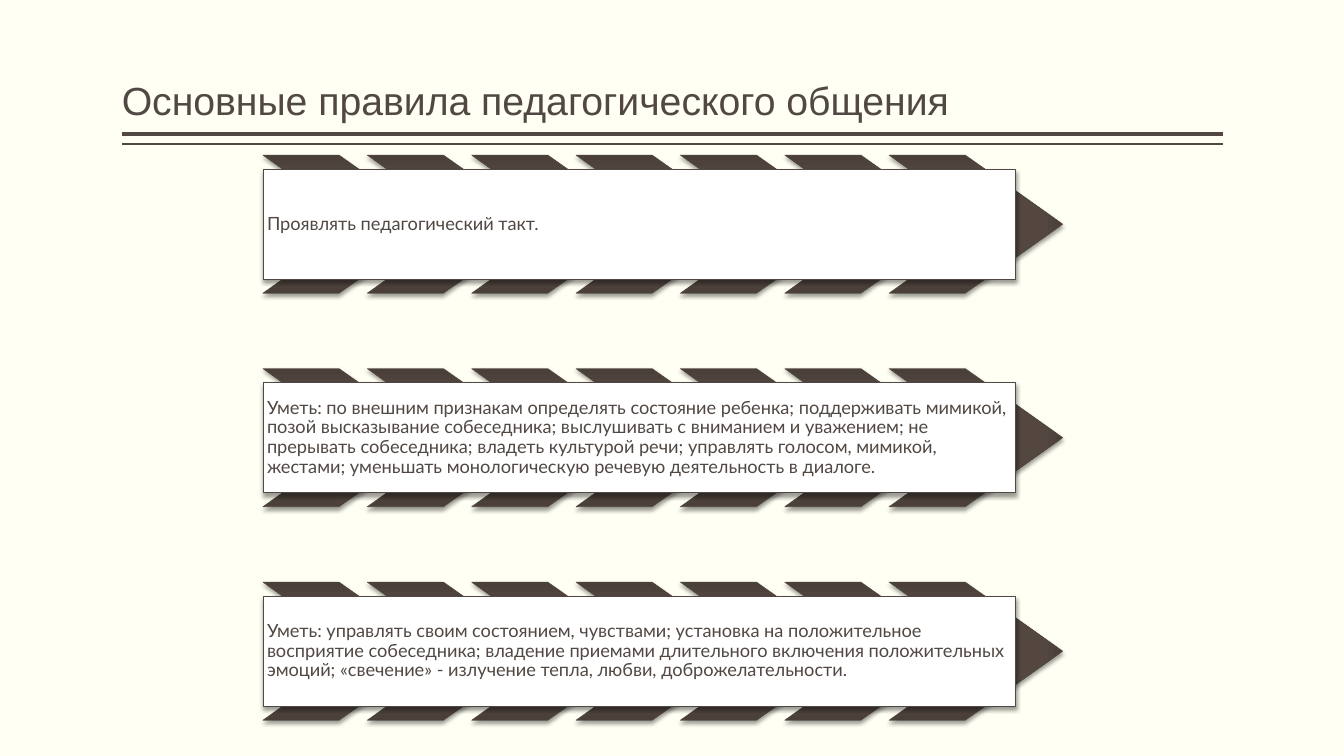
from lxml import etree
from pptx import Presentation
from pptx import util as u
from pptx.dml.color import RGBColor
from pptx.enum import shapes, text
from pptx.oxml import ns

CREAM = RGBColor(0xFF, 0xFF, 0xF3)
BROWN = RGBColor(0x51, 0x48, 0x43)
WHITE = RGBColor(0xFF, 0xFF, 0xFF)
SHADOW = RGBColor(0x00, 0x00, 0x00)
# Chevron gradient: position in percent and colour
GRADIENT = [
    (0, RGBColor(0x54, 0x47, 0x40)),
    (71, RGBColor(0x53, 0x47, 0x40)),
    (100, RGBColor(0x4A, 0x3F, 0x39)),
]

TITLE = "Основные правила педагогического общения"
RULES = [
    "Проявлять педагогический такт.",
    "Уметь: по внешним признакам определять состояние ребенка; поддерживать "
    "мимикой, позой высказывание собеседника; выслушивать с вниманием и "
    "уважением; не прерывать собеседника; владеть культурой речи; управлять "
    "голосом, мимикой, жестами; уменьшать монологическую речевую "
    "деятельность в диалоге.",
    "Уметь: управлять своим состоянием, чувствами; установка на положительное "
    "восприятие собеседника; владение приемами длительного включения "
    "положительных эмоций; «свечение» - излучение тепла, любви, "
    "доброжелательности.",
]

# Layout in centimetres
TITLE_LEFT, TITLE_WIDTH = 3.07, 27.74
ROW_LEFT, ROW_TOP, ROW_PITCH = 6.63, 3.91, 5.38
CHEVRON_COUNT, CHEVRON_PITCH = 7, 2.63
CHEVRON_WIDTH, CHEVRON_HEIGHT = 4.37, 3.48
BOX_WIDTH, BOX_HEIGHT = 18.97, 2.77


def add_xml(parent, tag, **attributes):
    return etree.SubElement(parent, ns.qn(tag), attributes)


class RuleSlide:
    """Holds the current slide and the style of its elements."""

    title_format = {"name": "Arial", "size": u.Pt(28)}
    rule_format = {"name": "Lato", "size": u.Pt(13)}

    def __init__(self, slide):
        self.slide = slide
        slide.background.fill.solid()
        slide.background.fill.fore_color.rgb = CREAM

    def line(self, y, width):
        line = self.slide.shapes.add_connector(
            shapes.MSO_CONNECTOR.STRAIGHT,
            u.Cm(TITLE_LEFT + TITLE_WIDTH), u.Cm(y), u.Cm(TITLE_LEFT), u.Cm(y))
        line.line.color.rgb = BROWN
        line.line.width = u.Pt(width)
        add_xml(line._element.spPr, "a:effectLst")

    def set_text(self, shape, content, font_format, anchor, margins, space_after=0):
        frame = shape.text_frame
        frame_format = {
            "word_wrap": True,
            "vertical_anchor": anchor,
            "margin_left": u.Cm(margins[0]),
            "margin_right": u.Cm(margins[0]),
            "margin_top": u.Cm(margins[1]),
            "margin_bottom": u.Cm(margins[1]),
        }
        for name, value in frame_format.items():
            setattr(frame, name, value)
        paragraph = frame.paragraphs[0]
        paragraph.text = content
        paragraph.alignment = text.PP_ALIGN.LEFT
        paragraph.line_spacing = 0.9
        paragraph.space_after = u.Pt(space_after)
        font = paragraph.runs[0].font
        for name, value in font_format.items():
            setattr(font, name, value)
        font.color.rgb = BROWN

    def title(self, content):
        box = self.slide.shapes.add_textbox(
            u.Cm(TITLE_LEFT), u.Cm(0.2), u.Cm(TITLE_WIDTH), u.Cm(3.05))
        self.set_text(box, content, self.title_format,
                      text.MSO_ANCHOR.BOTTOM, (0, 0.13))

    def shadowed_shape(self, kind, left, top, width, height):
        shape = self.slide.shapes.add_shape(
            kind, u.Cm(left), u.Cm(top), u.Cm(width), u.Cm(height))
        shape.line.color.rgb = BROWN
        shape.line.width = u.Pt(0.5)
        shape.shadow.inherit = False
        effects = shape._element.spPr.find(ns.qn("a:effectLst"))
        shadow = add_xml(effects, "a:outerShdw", blurRad=str(u.Pt(3.1)),
                         dist=str(u.Pt(2)), dir="5400000", rotWithShape="0")
        color = add_xml(shadow, "a:srgbClr", val=str(SHADOW))
        add_xml(color, "a:alpha", val="38000")
        return shape

    def chevron(self, left, top):
        shape = self.shadowed_shape(shapes.MSO_SHAPE.CHEVRON, left, top,
                                    CHEVRON_WIDTH, CHEVRON_HEIGHT)
        shape.adjustments[0] = 0.706
        gradient = etree.Element(ns.qn("a:gradFill"), rotWithShape="1")
        stops = add_xml(gradient, "a:gsLst")
        for position, color in GRADIENT:
            stop = add_xml(stops, "a:gs", pos=str(position * 1000))
            add_xml(stop, "a:srgbClr", val=str(color))
        center = add_xml(gradient, "a:path", path="rect")
        sides = dict.fromkeys("ltrb", "50000")
        add_xml(center, "a:fillToRect", **sides)
        shape._element.spPr.find(ns.qn("a:prstGeom")).addnext(gradient)

    def rule_box(self, top, content):
        box = self.shadowed_shape(shapes.MSO_SHAPE.RECTANGLE, ROW_LEFT, top,
                                  BOX_WIDTH, BOX_HEIGHT)
        box.fill.solid()
        box.fill.fore_color.rgb = WHITE
        self.set_text(box, content, self.rule_format,
                      text.MSO_ANCHOR.MIDDLE, (0.1, 0.1), space_after=4.5)


def main():
    presentation = Presentation()
    presentation.slide_width = u.Cm(33.87)
    presentation.slide_height = u.Cm(19.05)
    page = RuleSlide(presentation.slides.add_slide(presentation.slide_layouts[6]))

    # Title with a double underline
    page.line(3.38, 3)
    page.line(3.63, 1)
    page.title(TITLE)

    # Each rule lies over a row of chevrons
    for row, rule in enumerate(RULES):
        top = ROW_TOP + row * ROW_PITCH
        for column in range(CHEVRON_COUNT):
            page.chevron(ROW_LEFT + column * CHEVRON_PITCH, top)
        page.rule_box(top + (CHEVRON_HEIGHT - BOX_HEIGHT) / 2, rule)

    presentation.save("out.pptx")


if __name__ == "__main__":
    main()
